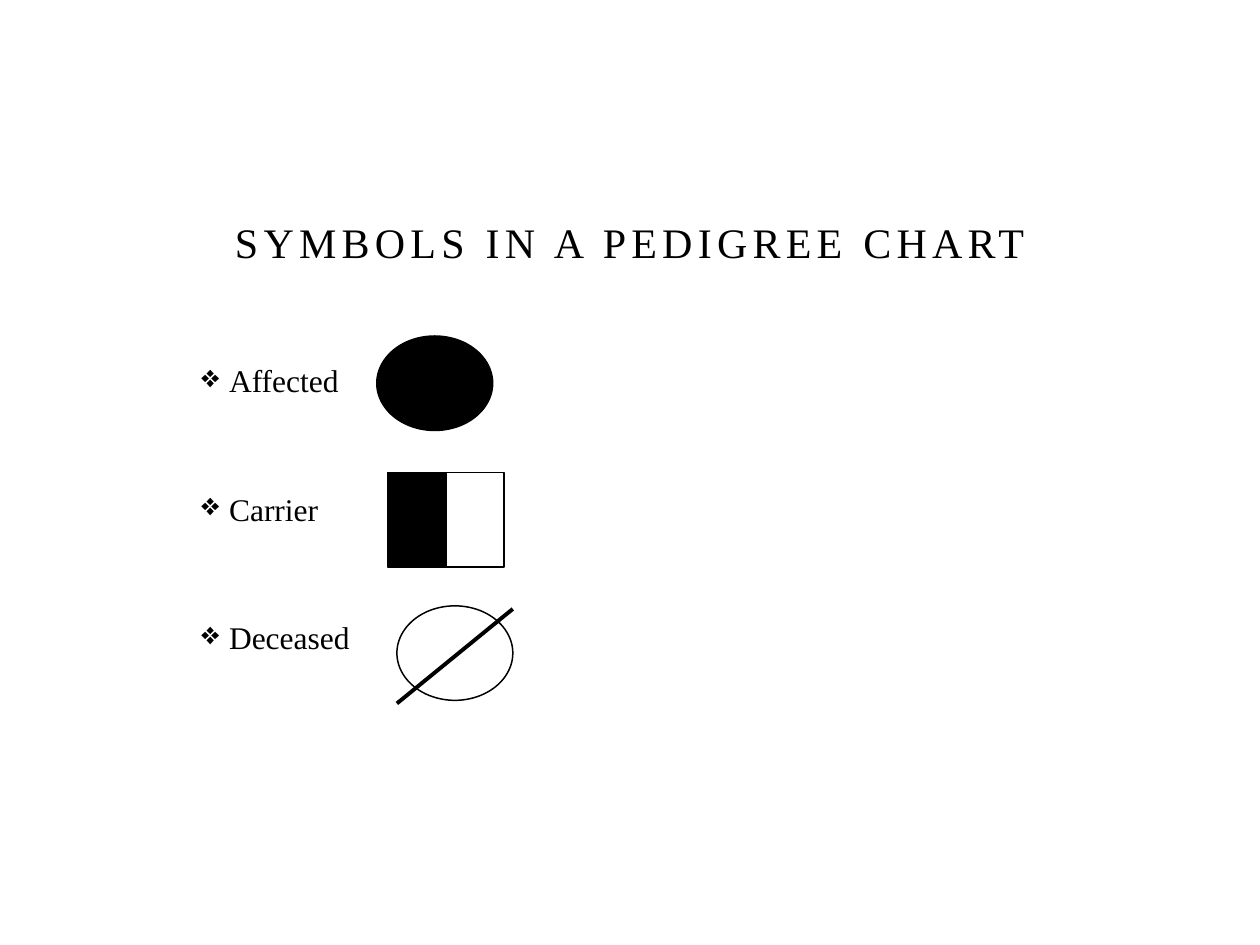
from lxml import etree
from pptx import Presentation
from pptx.dml.color import RGBColor
from pptx.enum.shapes import MSO_CONNECTOR, MSO_SHAPE
from pptx.enum.text import MSO_ANCHOR, PP_ALIGN
from pptx.oxml.ns import qn
from pptx.util import Inches, Pt

OVAL, RECT = MSO_SHAPE.OVAL, MSO_SHAPE.RECTANGLE
LINE = MSO_CONNECTOR.STRAIGHT
BOTTOM, CENTER = MSO_ANCHOR.BOTTOM, PP_ALIGN.CENTER

theme = {
    "ink": RGBColor(0, 0, 0),
    "font": "Times New Roman",
    "title": Pt(24),
    "label": Pt(18),
    "thin": Pt(0.85),
    "thick": Pt(2.25),
}

deck = Presentation()
deck.slide_width, deck.slide_height = Inches(10), Inches(7.5)
slide = deck.slides.add_slide(deck.slide_layouts[6])
shapes = slide.shapes
col, row = deck.slide_width / 100, deck.slide_height / 90


def grid(x, y, w, h):
    return round(x * col), round(y * row), round(w * col), round(h * row)


def style(par, size):
    for run in par.runs:
        run.font.name = theme["font"]
        run.font.size = size
        run.font.color.rgb = theme["ink"]


title = shapes.add_textbox(*grid(15, 17, 70, 9)).text_frame
title.word_wrap = True
title.vertical_anchor = BOTTOM
title.text = "SYMBOLS IN A PEDIGREE CHART"
head = title.paragraphs[0]
head.alignment = CENTER
style(head, theme["title"])
head.runs[0].font._element.set("spc", "300")

body = shapes.add_textbox(*grid(15, 32, 70, 40)).text_frame
body.word_wrap = True
body.text = "Affected\nCarrier\nDeceased"
hang = round(2.2 * col)
for rank, par in enumerate(body.paragraphs):
    props = par._p.get_or_add_pPr()
    props.set("marL", str(hang))
    props.set("indent", str(-hang))
    etree.SubElement(props, qn("a:buChar")).set("char", "❖")
    par.line_spacing = 1.5
    if rank:
        par.space_before = Pt(41)
    style(par, theme["label"])

wide, tall = 9.2, 9
marks = [
    (OVAL, 29.9, 32, wide, True),
    (RECT, 30.8, 45, wide, False),
    (RECT, 30.8, 45, wide / 2, True),
    (OVAL, 31.5, 57.7, wide, False),
]
for kind, x, y, width, solid in marks:
    mark = shapes.add_shape(kind, *grid(x, y, width, tall))
    mark.shadow.inherit = False
    if solid:
        mark.fill.solid()
        mark.fill.fore_color.rgb = theme["ink"]
    else:
        mark.fill.background()
    mark.line.color.rgb = theme["ink"]
    mark.line.width = theme["thin"]

left, top, width, height = grid(31.5, 58, wide, tall)
slash = shapes.add_connector(LINE, left + width, top, left, top + height)
slash.line.color.rgb = theme["ink"]
slash.line.width = theme["thick"]
etree.SubElement(slash._element.spPr, qn("a:effectLst"))

deck.save("out.pptx")
